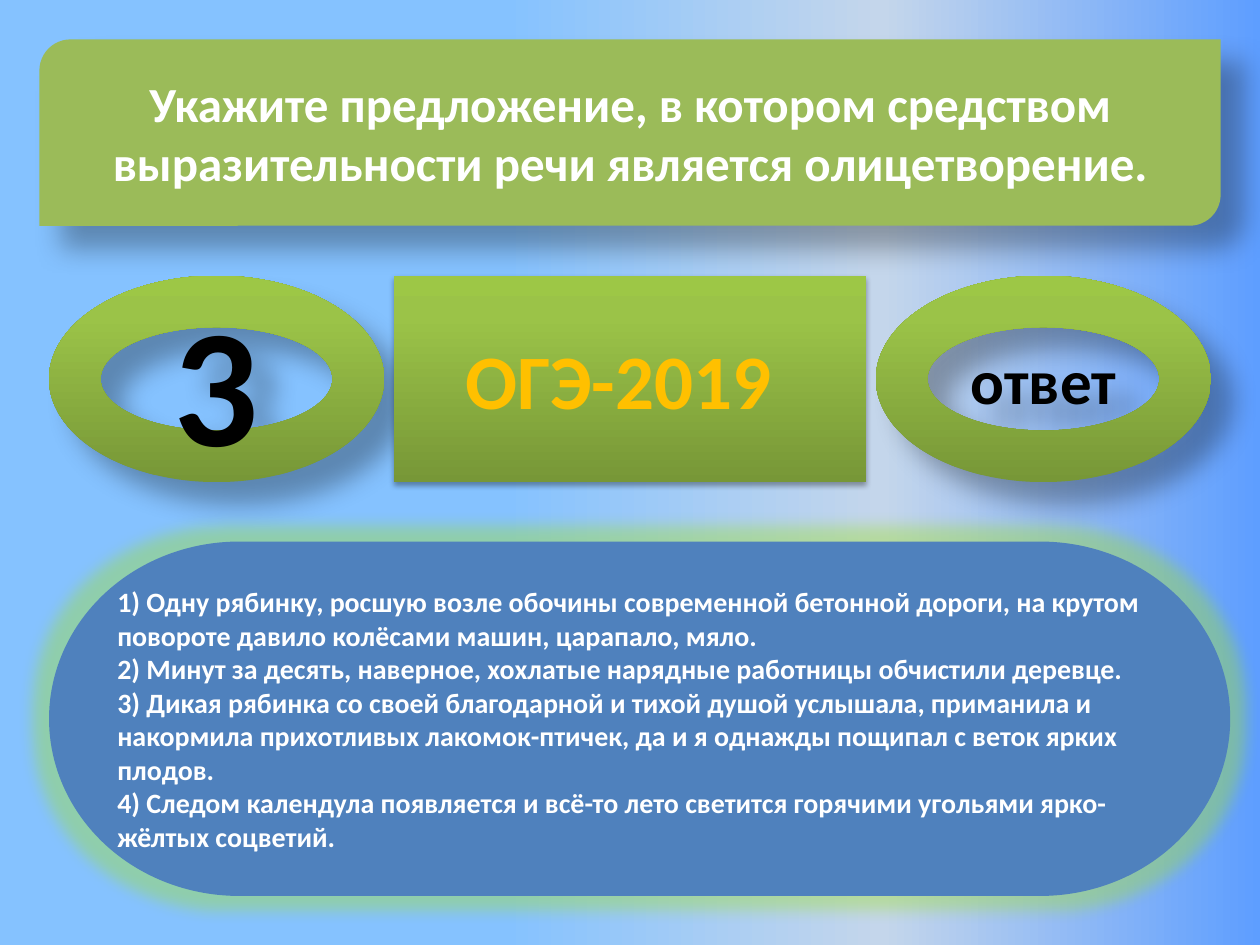
from dataclasses import dataclass
from typing import Optional

from lxml import etree
from pptx import Presentation
from pptx import util as u
from pptx.dml.color import RGBColor
from pptx.enum import shapes, text
from pptx.oxml import ns

WHITE = RGBColor(0xFF, 0xFF, 0xFF)
BLACK = RGBColor(0, 0, 0)
AMBER = RGBColor(0xFF, 0xC0, 0x00)
GREEN = RGBColor(0x9B, 0xBB, 0x59)
BLUE = RGBColor(0x4F, 0x81, 0xBD)
GLOW_GREEN = RGBColor(0x9F, 0xE0, 0x30)
BUTTON_STOPS = [(0, RGBColor(0x77, 0x97, 0x37)), (80, RGBColor(0x9B, 0xC3, 0x48)),
                (100, RGBColor(0x9D, 0xC7, 0x46))]
SKY_STOPS = [(40, RGBColor(0x85, 0xC2, 0xFF)), (70, RGBColor(0xC4, 0xD6, 0xEB)),
             (100, RGBColor(0x5E, 0x9E, 0xFF))]
FONT = "Calibri"

QUESTION = "Укажите предложение, в котором средством выразительности речи является олицетворение."
ANSWERS = [
    "1) Одну рябинку, росшую возле обочины современной бетонной дороги, на крутом "
    "повороте давило колёсами машин, царапало, мяло.",
    "2) Минут за десять, наверное, хохлатые нарядные работницы обчистили деревце.",
    "3) Дикая рябинка со своей благодарной и тихой душой услышала, приманила и "
    "накормила прихотливых лакомок-птичек, да и я однажды пощипал с веток ярких плодов.",
    "4) Следом календула появляется и всё-то лето светится горячими угольями "
    "ярко-жёлтых соцветий.",
]


@dataclass
class Area:
    left: float
    top: float
    width: float
    height: float

    def lengths(self) -> list:
        return [u.Pt(value) for value in (self.left, self.top, self.width, self.height)]


@dataclass
class Shadow:
    alpha: int
    blur: float
    distance: float
    angle: int


@dataclass
class Button:
    kind: int
    area: Area
    label: str
    size: int
    color: RGBColor
    align: int
    shadow: Shadow


def add_xml(parent, tag: str, **attributes):
    values = {name: str(value) for name, value in attributes.items()}
    return etree.SubElement(parent, ns.qn(tag), values)


def fill_gradient(owner, fill, stops: list, angle: int) -> None:
    fill.gradient()
    fill.gradient_angle = angle
    stop_list = next(owner.iter(ns.qn("a:gsLst")))
    for stop in list(stop_list):
        stop_list.remove(stop)
    for position, color in stops:
        stop = add_xml(stop_list, "a:gs", pos=position * 1000)
        add_xml(stop, "a:srgbClr", val=color)


def add_effect(shape, tag: str, color: RGBColor, alpha: int, **attributes) -> None:
    effects = shape._element.spPr.find(ns.qn("a:effectLst"))
    effect = add_xml(effects, tag, **attributes)
    tint = add_xml(effect, "a:srgbClr", val=color)
    add_xml(tint, "a:alpha", val=alpha * 1000)


def add_shadow(shape, shadow: Shadow) -> None:
    add_effect(shape, "a:outerShdw", BLACK, shadow.alpha, blurRad=u.Pt(shadow.blur),
               dist=u.Pt(shadow.distance), dir=shadow.angle * 60000, rotWithShape=0)


def add_plain_shape(page, kind: int, area: Area, color: Optional[RGBColor] = None):
    shape = page.shapes.add_shape(kind, *area.lengths())
    shape.shadow.inherit = False
    shape.line.fill.background()
    if color is not None:
        shape.fill.solid()
        shape.fill.fore_color.rgb = color
    return shape


def write(box, lines: list, size: int, color: RGBColor, align: int) -> None:
    frame = box.text_frame
    frame.word_wrap = True
    frame.auto_size = text.MSO_AUTO_SIZE.NONE
    frame.vertical_anchor = text.MSO_ANCHOR.MIDDLE
    frame.text = "\n".join(lines)
    for para in frame.paragraphs:
        para.alignment = align
        para.space_before = u.Pt(0)
        for span in para.runs:
            span.font.name = FONT
            span.font.size = u.Pt(size)
            span.font.bold = True
            span.font.color.rgb = color


def place(box, area: Area) -> None:
    """Move a placeholder to an area, in front of the shapes drawn so far."""
    box.left, box.top, box.width, box.height = area.lengths()
    box._element.getparent().append(box._element)


def add_button(page, button: Button) -> None:
    shape = add_plain_shape(page, button.kind, button.area)
    fill_gradient(shape._element, shape.fill, BUTTON_STOPS, 90)
    add_shadow(shape, button.shadow)
    write(shape, [button.label], button.size, button.color, button.align)


def main() -> None:
    deck = Presentation()
    deck.slide_width, deck.slide_height = u.Pt(720), u.Pt(540)
    page = deck.slides.add_slide(deck.slide_layouts[1])
    fill_gradient(page.background._cSld, page.background.fill, SKY_STOPS, 0)
    kinds = shapes.MSO_SHAPE
    center, left = text.PP_ALIGN.CENTER, text.PP_ALIGN.LEFT
    deep = Shadow(30, 15, 18, 45)
    soft = Shadow(35, 3.1, 1.8, 90)

    # Question banner
    banner_area = Area(22.5, 22.5, 675, 106.5)
    banner = add_plain_shape(page, kinds.ROUND_2_DIAG_RECTANGLE, banner_area, GREEN)
    add_shadow(banner, deep)
    title = page.shapes.title
    place(title, banner_area)
    write(title, [QUESTION], 28, WHITE, center)

    # Row of buttons
    top, height, ring = 157.5, 118, 191.5
    for button in (
        Button(kinds.DONUT, Area(28, top, ring, height), "3", 96, BLACK, center, deep),
        Button(kinds.DONUT, Area(500.5, top, ring, height), "ответ", 36, BLACK, center, deep),
        Button(kinds.FLOWCHART_PREDEFINED_PROCESS, Area(225, top, 270, height),
               "ОГЭ-2019", 44, AMBER, left, soft),
    ):
        add_button(page, button)

    # Answer panel
    panel_area = Area(28, 309.5, 675, 202.5)
    panel = add_plain_shape(page, kinds.FLOWCHART_TERMINATOR, panel_area, BLUE)
    add_effect(panel, "a:glow", GLOW_GREEN, 40, rad=u.Pt(18))
    body = page.placeholders[1]
    place(body, panel_area)
    write(body, ANSWERS, 16, WHITE, left)
    body.text_frame.margin_left = body.text_frame.margin_right = u.Pt(39)
    for para in body.text_frame.paragraphs:
        settings = para._p.get_or_add_pPr()
        settings.set("marL", "0")
        settings.set("indent", "0")
        add_xml(settings, "a:buNone")

    deck.save("out.pptx")


if __name__ == "__main__":
    main()
